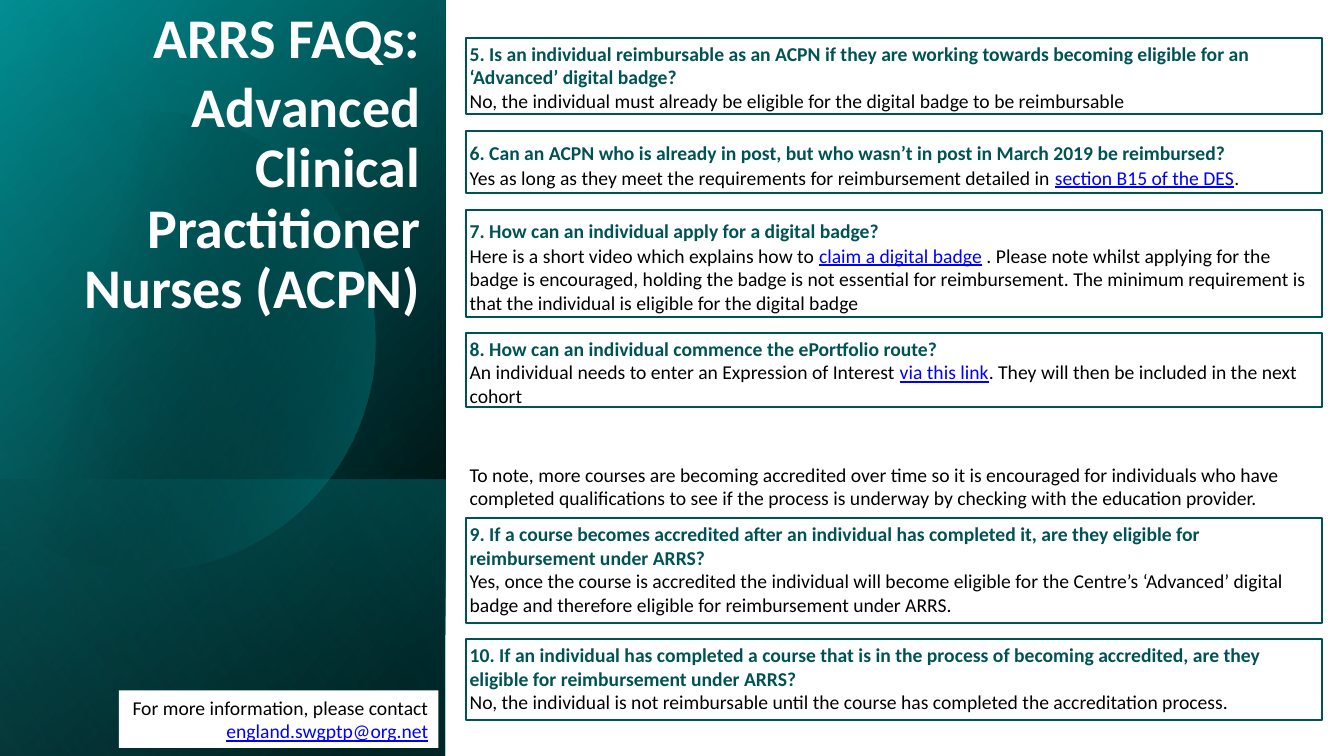
import math

from lxml import etree
from pptx import Presentation
from pptx.dml.color import RGBColor
from pptx.enum import shapes, text
from pptx.oxml import ns
from pptx.util import Pt

TEAL, BLACK, WHITE, LINK = "005355", "000000", "FFFFFF", "0000FF"
PANEL_WIDTH, SLIDE_WIDTH, SLIDE_HEIGHT = 318.2, 960, 540
BOX_LEFT, BOX_WIDTH = 332.6, 612

# Each panel layer: top, height, gradient angle, stops of (position, colour, opacity) in percent.
PANEL_LAYERS = [
    (0, 540, 50, [(8, BLACK, 100), (100, "007C80", 100)]),
    (0, 540, 30, [(0, BLACK, 0), (99, "00A6AA", 46)]),
    (342.7, 197.3, 130, [(2, "00A6AA", 29), (100, BLACK, 30)]),
]
SHEEN = (0, 540, 120, [(0, BLACK, 0), (99, "33FAFF", 11)])

# Each box: top, height, extra inset above, gap below the question, question,
# answer pieces (those at odd places are links).
FAQ_BOXES = [
    (26.9, 54.6, 0, 0,
     "5. Is an individual reimbursable as an ACPN if they are working towards becoming "
     "eligible for an ‘Advanced’ digital badge?",
     ["No, the individual must already be eligible for the digital badge to be reimbursable"]),
    (93.6, 44, 4, 1,
     "6. Can an ACPN who is already in post, but who wasn’t in post in March 2019 be reimbursed?",
     ["Yes as long as they meet the requirements for reimbursement detailed in ",
      "section B15 of the DES", "."]),
    (149.8, 77, 3.5, 1,
     "7. How can an individual apply for a digital badge?",
     ["Here is a short video which explains how to ", "claim a digital badge",
      " . Please note whilst applying for the badge is encouraged, holding the badge is not "
      "essential for reimbursement. The minimum requirement is that the individual is eligible "
      "for the digital badge"]),
    (237.6, 53.3, 0, 0,
     "8. How can an individual commence the ePortfolio route?",
     ["An individual needs to enter an Expression of Interest ", "via this link",
      ". They will then be included in the next cohort"]),
    (370.1, 74.9, 0, 0,
     "9. If a course becomes accredited after an individual has completed it, are they eligible "
     "for reimbursement under ARRS?",
     ["Yes, once the course is accredited the individual will become eligible for the Centre’s "
      "‘Advanced’ digital badge and therefore eligible for reimbursement under ARRS."]),
    (456.5, 57.6, 0, 0,
     "10. If an individual has completed a course that is in the process of becoming accredited, "
     "are they eligible for reimbursement under ARRS?",
     ["No, the individual is not reimbursable until the course has completed the "
      "accreditation process."]),
]


def rgb(colour):
    return RGBColor.from_string(colour)


def add_text(paragraph, content, size=14, colour=BLACK, bold=False, underline=False):
    run = paragraph.add_run()
    run.text = content
    run.font.name, run.font.size = "Calibri", Pt(size)
    run.font.bold, run.font.underline = bold, underline
    run.font.color.rgb = rgb(colour)


def add_pieces(paragraph, pieces):
    """Write plain text and links in turn."""
    for index, piece in enumerate(pieces):
        is_link = index % 2 == 1
        add_text(paragraph, piece, colour=LINK if is_link else BLACK, underline=is_link)


def set_frame(shape, left=7.2, top=3.6, right=7.2, bottom=3.6):
    frame = shape.text_frame
    frame.word_wrap = True
    frame.auto_size = text.MSO_AUTO_SIZE.NONE
    frame.vertical_anchor = text.MSO_ANCHOR.TOP
    frame.margin_left, frame.margin_top = Pt(left), Pt(top)
    frame.margin_right, frame.margin_bottom = Pt(right), Pt(bottom)
    return frame


def add_rectangle(slide, left, top, width, height):
    shape = slide.shapes.add_shape(
        shapes.MSO_SHAPE.RECTANGLE, Pt(left), Pt(top), Pt(width), Pt(height))
    shape.shadow.inherit = False
    shape.fill.background()
    shape.line.fill.background()
    return shape


def set_gradient(shape, angle, stops):
    """Fill with a linear gradient whose stops have an opacity."""
    shape.fill.gradient()
    gradient = shape.element.spPr.find(ns.qn("a:gradFill"))
    for child in list(gradient):
        gradient.remove(child)
    stop_list = etree.SubElement(gradient, ns.qn("a:gsLst"))
    for position, colour, opacity in stops:
        stop = etree.SubElement(stop_list, ns.qn("a:gs"), pos=str(position * 1000))
        colour_element = etree.SubElement(stop, ns.qn("a:srgbClr"), val=colour)
        etree.SubElement(colour_element, ns.qn("a:alpha"), val=str(opacity * 1000))
    etree.SubElement(gradient, ns.qn("a:lin"), ang=str(angle * 60000), scaled="0")


def add_panel_layer(slide, top, height, angle, stops):
    """Add a mirrored rectangle, turned by 90 degrees, across the left panel."""
    offset = (PANEL_WIDTH - height) / 2
    shape = add_rectangle(slide, offset, top - offset, height, PANEL_WIDTH)
    shape.rotation = 90
    shape.element.spPr.xfrm.set("flipH", "1")
    set_gradient(shape, angle, stops)


def add_glow(slide, centre_x=103.7, centre_y=243.4, radius=164.2):
    """Add the disc that the left edge of the slide cuts off."""
    limit = math.acos(-centre_x / radius)
    steps = 90
    angles = [limit * (2 * step / steps - 1) for step in range(steps + 1)]
    points = [(Pt(centre_x + radius * math.cos(angle)), Pt(centre_y + radius * math.sin(angle)))
              for angle in angles]
    builder = slide.shapes.build_freeform(*points[0])
    builder.add_line_segments(points[1:], close=True)
    glow = builder.convert_to_shape()
    glow.shadow.inherit = False
    glow.line.fill.background()
    set_gradient(glow, 14, [(29, BLACK, 0), (100, "00A6AA", 43)])


def place_title(slide, lines):
    title = slide.shapes.title
    title.left, title.top, title.width, title.height = Pt(5.8), Pt(3.6), Pt(301.7), Pt(304.6)
    slide.shapes.element.append(title.element)  # in front of the panel
    frame = set_frame(title)
    for index, line in enumerate(lines):
        paragraph = frame.add_paragraph() if index else frame.paragraphs[0]
        paragraph.alignment = text.PP_ALIGN.RIGHT
        paragraph.line_spacing, paragraph.space_after = 0.9, Pt(6)
        add_text(paragraph, line, size=40, colour=WHITE, bold=True)


def add_faq_box(slide, top, height, inset, gap, question, answer):
    box = add_rectangle(slide, BOX_LEFT, top, BOX_WIDTH, height)
    box.line.color.rgb, box.line.width = rgb(TEAL), Pt(1.5)
    frame = set_frame(box, 2.9, 2.9 + inset, 2.9, 2.9)
    heading, reply = frame.paragraphs[0], frame.add_paragraph()
    heading.alignment = reply.alignment = text.PP_ALIGN.LEFT
    heading.space_after = Pt(gap)
    add_text(heading, question, colour=TEAL, bold=True)
    add_pieces(reply, answer)


def add_note(slide, content):
    note = slide.shapes.add_textbox(Pt(BOX_LEFT), Pt(326.9), Pt(BOX_WIDTH), Pt(41))
    add_text(set_frame(note, left=2.9).paragraphs[0], content)


def add_contact(slide, pieces):
    contact = add_rectangle(slide, 85, 493.2, 228.2, 41)
    contact.fill.solid()
    contact.fill.fore_color.rgb = rgb(WHITE)
    paragraph = set_frame(contact).paragraphs[0]
    paragraph.alignment = text.PP_ALIGN.RIGHT
    add_pieces(paragraph, pieces)


def main():
    presentation = Presentation()
    presentation.slide_width, presentation.slide_height = Pt(SLIDE_WIDTH), Pt(SLIDE_HEIGHT)
    slide = presentation.slides.add_slide(presentation.slide_layouts.get_by_name("Title Only"))
    for layer in PANEL_LAYERS:
        add_panel_layer(slide, *layer)
    add_glow(slide)
    add_panel_layer(slide, *SHEEN)
    place_title(slide, ["ARRS FAQs:", "Advanced Clinical Practitioner Nurses (ACPN)"])
    for box in FAQ_BOXES:
        add_faq_box(slide, *box)
    add_note(slide, "To note, more courses are becoming accredited over time so it is encouraged "
                    "for individuals who have completed qualifications to see if the process is "
                    "underway by checking with the education provider.")
    add_contact(slide, ["For more information, please contact ", "england.swgptp@org.net"])
    presentation.save("out.pptx")


if __name__ == "__main__":
    main()
